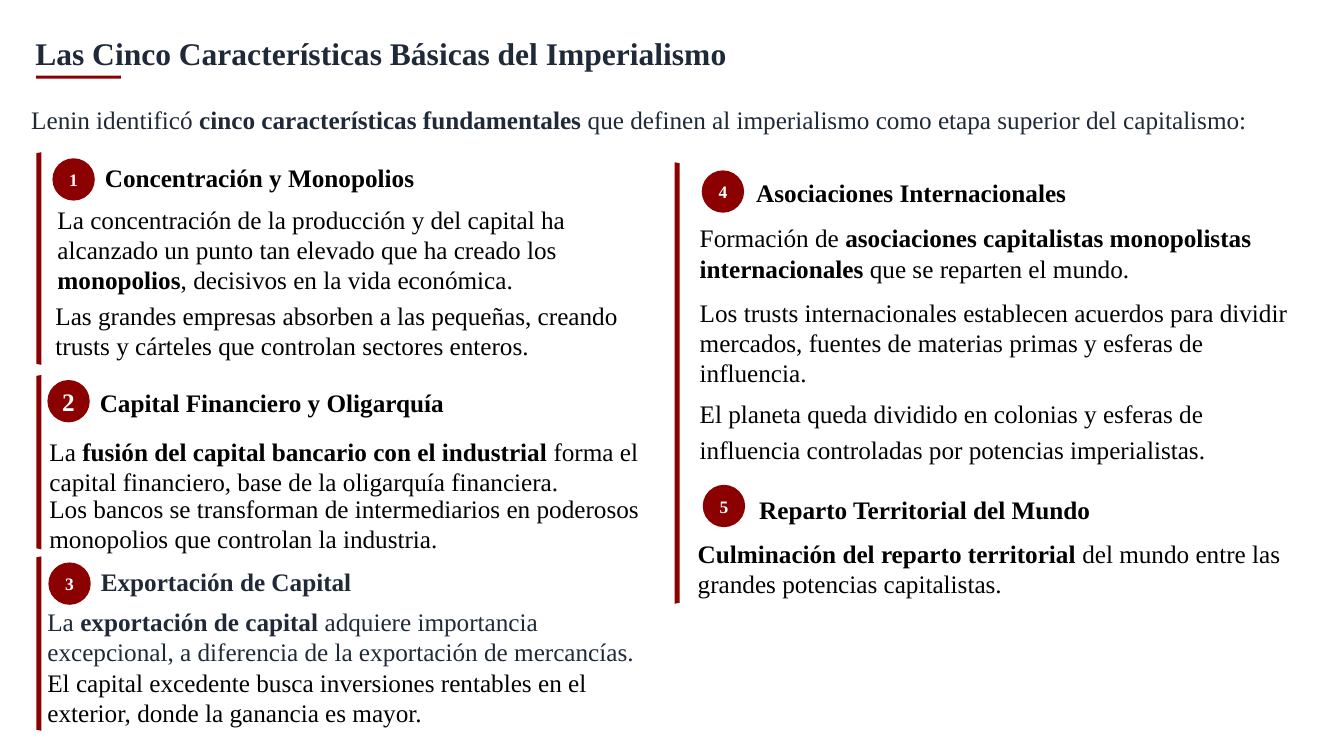
from pptx import Presentation
from pptx.dml.color import RGBColor
from pptx.enum.shapes import MSO_SHAPE
from pptx.enum.text import MSO_ANCHOR, MSO_AUTO_SIZE, PP_ALIGN
from pptx.util import Inches, Pt

OVAL, RECTANGLE = MSO_SHAPE.OVAL, MSO_SHAPE.RECTANGLE
MIDDLE, NO_AUTOFIT = MSO_ANCHOR.MIDDLE, MSO_AUTO_SIZE.NONE
LEFT, CENTER = PP_ALIGN.LEFT, PP_ALIGN.CENTER

RED = RGBColor(0x8B, 0x00, 0x00)
SLATE = RGBColor(0x1F, 0x29, 0x37)
BLACK = RGBColor(0x00, 0x00, 0x00)
WHITE = RGBColor(0xFF, 0xFF, 0xFF)
FONT = "Times New Roman"
BADGE_SIZE = 0.42
BAR_WIDTH = 0.05
BAR_CUT = 0.01

# left, top, height, side of the cut corners
BARS = [
    (0.36, 1.51, 2.11, "left"),
    (0.36, 3.72, 1.73, "left"),
    (0.36, 5.52, 1.73, "left"),
    (6.69, 1.61, 4.38, "right"),
]
BADGES = [
    ("1", 0.52, 1.57, 12.5),
    ("2", 0.47, 3.77, 18),
    ("3", 0.48, 5.58, 12.5),
    ("4", 6.96, 1.69, 12.5),
    ("5", 6.97, 4.81, 12.5),
]
HEADINGS = [
    ("Concentración y Monopolios", (1.04, 1.53, 3.52, 0.46), BLACK),
    ("Capital Financiero y Oligarquía", (0.99, 3.86, 4.26, 0.27), BLACK),
    ("Exportación de Capital", (1, 5.63, 3.69, 0.27), SLATE),
    ("Asociaciones Internacionales", (7.5, 1.71, 4.42, 0.39), BLACK),
    ("Reparto Territorial del Mundo", (7.53, 4.95, 4.2, 0.2), BLACK),
]
BODIES = [
    ("La concentración de la producción y del capital ha alcanzado un punto tan "
     "elevado que ha creado los **monopolios**, decisivos en la vida económica.",
     (0.57, 2, 6.01, 0.95)),
    ("Las grandes empresas absorben a las pequeñas, creando trusts y cárteles "
     "que controlan sectores enteros.", (0.55, 2.93, 6, 0.69)),
    ("La **fusión del capital bancario con el industrial** forma el capital "
     "financiero, base de la oligarquía financiera.", (0.49, 4.28, 6.01, 0.69)),
    ("Los bancos se transforman de intermediarios en poderosos monopolios que "
     "controlan la industria.", (0.49, 4.91, 6, 0.57)),
    ("Formación de **asociaciones capitalistas monopolistas internacionales** "
     "que se reparten el mundo.", (6.94, 2.14, 6.25, 0.74)),
    ("Los trusts internacionales establecen acuerdos para dividir mercados, "
     "fuentes de materias primas y esferas de influencia.", (6.94, 2.77, 6, 1.25)),
    ("**Culminación del reparto territorial** del mundo entre las grandes "
     "potencias capitalistas.", (6.92, 5.27, 6.01, 0.74)),
]
INTRO = ("Lenin identificó **cinco características fundamentales** que definen al "
         "imperialismo como etapa superior del capitalismo:")
EXPORT = ("La **exportación de capital** adquiere importancia excepcional, a "
          "diferencia de la exportación de mercancías. ")
EXPORT_REASON = ("El capital excedente busca inversiones rentables en el exterior, "
                 "donde la ganancia es mayor.")


def write(shape, text, color, size=18, bold=False, align=LEFT, spacing=1.0):
    frame = shape.text_frame
    frame.auto_size = NO_AUTOFIT
    frame.word_wrap = True
    frame.vertical_anchor = MIDDLE
    frame.margin_left = frame.margin_right = 0
    frame.margin_top = frame.margin_bottom = 0
    para = frame.paragraphs[0]
    para.alignment = align
    para.line_spacing = spacing
    para.font.name = FONT
    para.font.size = Pt(size)
    para.font.bold = bold
    para.font.color.rgb = color
    for index, part in enumerate(text.split("**")):
        if part:
            span = para.add_run()
            span.text = part
            if index % 2:
                span.font.bold = True
    return para


def add_text(page, text, place, color, **style):
    box = page.shapes.add_textbox(*map(Inches, place))
    return write(box, text, color, **style)


def paint(shape):
    shape.shadow.inherit = False
    shape.fill.solid()
    shape.fill.fore_color.rgb = RED
    shape.line.fill.background()


def add_title(page, text):
    title = page.shapes.title
    title.left, title.top = Inches(0.35), Inches(0.37)
    title.width, title.height = Inches(12.8), Inches(0.35)
    write(title, text, SLATE, size=22.5, bold=True, spacing=0.9)
    paint(page.shapes.add_shape(RECTANGLE, Inches(0.36), Inches(0.75),
                                Inches(0.84), Inches(0.03)))


def add_bar(page, left, top, height, cut_side):
    bottom = top + height
    flat, cut = left + BAR_WIDTH, left
    if cut_side == "right":
        flat, cut = cut, flat
    corners = [(cut, top + BAR_CUT), (cut, bottom - BAR_CUT), (flat, bottom)]
    builder = page.shapes.build_freeform(Inches(flat), Inches(top))
    builder.add_line_segments([(Inches(x), Inches(y)) for x, y in corners])
    paint(builder.convert_to_shape())


def add_badge(page, number, left, top, size):
    badge = page.shapes.add_shape(OVAL, Inches(left), Inches(top),
                                  Inches(BADGE_SIZE), Inches(BADGE_SIZE))
    paint(badge)
    write(badge, number, WHITE, size=size, bold=True, align=CENTER)


def main():
    deck = Presentation()
    deck.slide_width, deck.slide_height = Inches(13.33), Inches(7.5)
    page = deck.slides.add_slide(deck.slide_layouts.get_by_name("Title Only"))
    add_title(page, "Las Cinco Características Básicas del Imperialismo")
    add_text(page, INTRO, (0.31, 0.75, 12.71, 0.75), SLATE, spacing=1.4)
    for bar in BARS:
        add_bar(page, *bar)
    for badge in BADGES:
        add_badge(page, *badge)
    for text, place, color in HEADINGS:
        add_text(page, text, place, color, bold=True)
    for text, place in BODIES:
        add_text(page, text, place, BLACK)
    add_text(page, "El planeta queda dividido en colonias y esferas de influencia "
             "controladas por potencias imperialistas.",
             (6.94, 3.94, 6, 0.62), BLACK, spacing=1.2)
    export = add_text(page, EXPORT, (0.47, 5.99, 6.01, 1.25), SLATE)
    reason = export.add_run()
    reason.text = EXPORT_REASON
    reason.font.color.rgb = BLACK
    deck.save("out.pptx")


if __name__ == "__main__":
    main()
